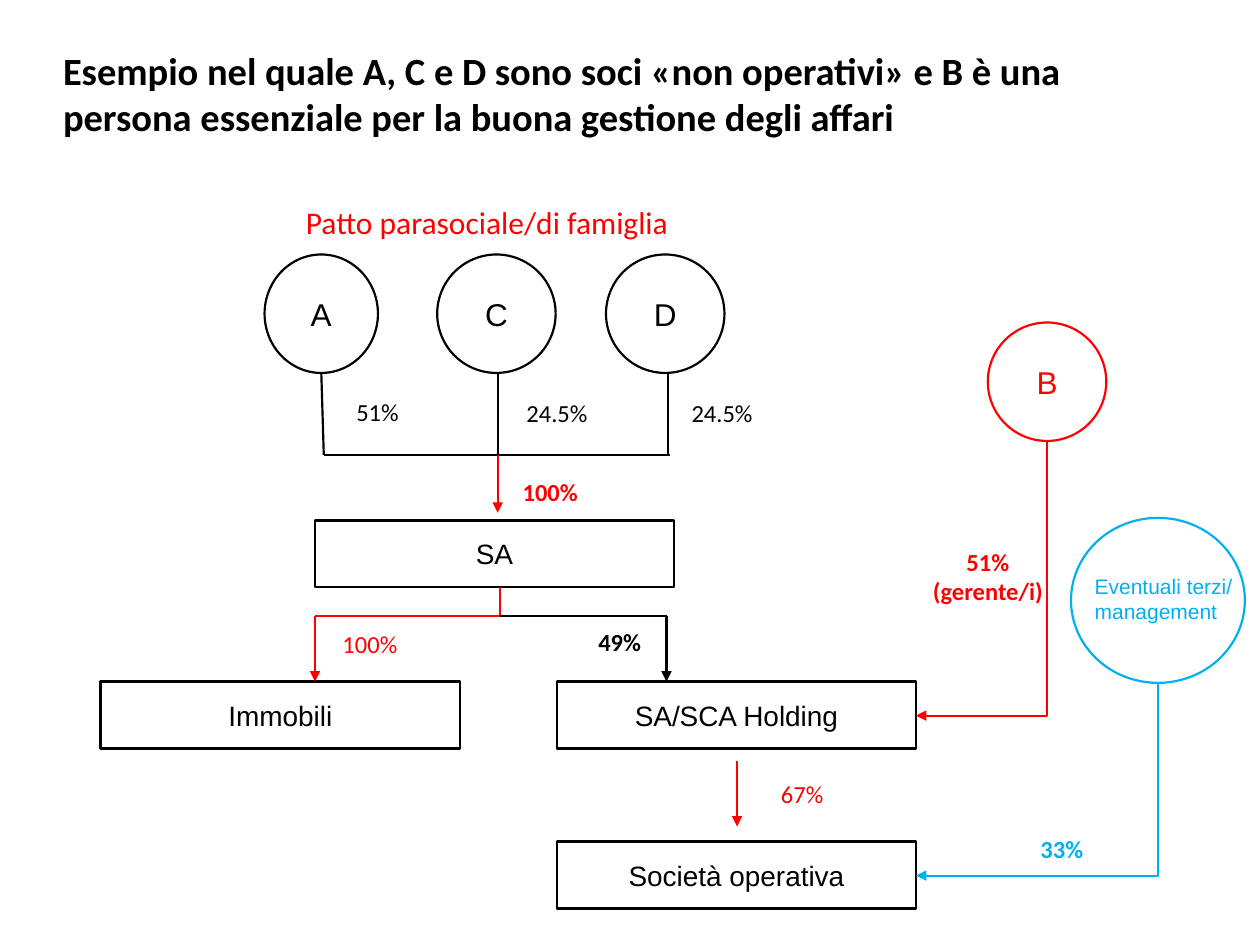
from lxml.etree import SubElement
from pptx import Presentation
from pptx.dml.color import RGBColor
from pptx.enum.shapes import MSO_CONNECTOR as Link, MSO_SHAPE as Shape
from pptx.enum.text import MSO_ANCHOR as Anchor, MSO_AUTO_SIZE as AutoSize, PP_ALIGN as Align
from pptx.oxml.ns import qn
from pptx.util import Inches, Pt

COLORS = {"black": "000000", "red": "FF0000", "blue": "00B0F0"}
COLUMNS, ROWS = 100, 75
BOX_W, BOX_H = 28.5, 5.3
CIRCLE = 9.4


def color_of(name):
    return RGBColor.from_string(COLORS[name])


def write(frame, text, size=14, color="black", font="Calibri", bold=False,
          align=Align.LEFT, anchor=Anchor.TOP, fit=AutoSize.NONE):
    """Fill a text frame, one paragraph per line of text."""
    frame.text = text
    frame.word_wrap = True
    frame.vertical_anchor = anchor
    frame.auto_size = fit
    for paragraph in frame.paragraphs:
        paragraph.alignment = align
        for run in paragraph.runs:
            run.font.size = Pt(size)
            run.font.name = font
            run.font.bold = bold
            run.font.color.rgb = color_of(color)


class Diagram:
    """Draws on one slide; lengths are grid columns and rows."""

    def __init__(self, deck):
        self.slide = deck.slides.add_slide(deck.slide_layouts[5])
        self.shapes = self.slide.shapes
        self.column = deck.slide_width / COLUMNS
        self.row = deck.slide_height / ROWS

    def x(self, columns):
        return round(columns * self.column)

    def y(self, rows):
        return round(rows * self.row)

    def area(self, left, top, width, height):
        return self.x(left), self.y(top), self.x(width), self.y(height)

    def title(self, text, *area):
        heading = self.shapes.title
        heading.left, heading.top, heading.width, heading.height = self.area(*area)
        write(heading.text_frame, text, size=22, bold=True, anchor=Anchor.MIDDLE)

    def node(self, kind, text, area, color="black", size=16, weight=1.5):
        node = self.shapes.add_shape(kind, *self.area(*area))
        node.shadow.inherit = False
        node.fill.background()
        node.line.color.rgb = color_of(color)
        node.line.width = Pt(weight)
        write(node.text_frame, text, size=size, color=color, font="Arial",
              align=Align.CENTER, anchor=Anchor.MIDDLE)

    def person(self, text, left, top, width=CIRCLE, height=CIRCLE, color="black"):
        self.node(Shape.OVAL, text, (left, top, width, height), color, 18, 1.25)

    def company(self, text, left, top):
        self.node(Shape.RECTANGLE, text, (left, top, BOX_W, BOX_H))

    def label(self, text, left, top, width=7.4, height=3.4, **style):
        box = self.shapes.add_textbox(*self.area(left, top, width, height))
        write(box.text_frame, text, fit=AutoSize.SHAPE_TO_FIT_TEXT, **style)

    def line(self, start, end, color="black", arrow=False, kind=Link.STRAIGHT):
        link = self.shapes.add_connector(
            kind, self.x(start[0]), self.y(start[1]), self.x(end[0]), self.y(end[1]))
        link.line.color.rgb = color_of(color)
        link.line.width = Pt(1.25)
        properties = link._element.spPr
        if arrow:
            SubElement(properties.find(qn("a:ln")), qn("a:tailEnd"), type="triangle")
        SubElement(properties, qn("a:effectLst"))
        return link

    def down_then_left(self, start, end, color):
        """Arrow with one corner: an elbow turned a quarter clockwise."""
        link = self.line(start, end, color, arrow=True, kind=Link.ELBOW)
        run, drop = link.width, link.height
        link.left += (run - drop) // 2
        link.top += (drop - run) // 2
        link.width, link.height = drop, run
        properties = link._element.spPr
        properties.find(qn("a:prstGeom")).set("prst", "bentConnector2")
        frame = properties.find(qn("a:xfrm"))
        frame.attrib.pop("flipH", None)
        frame.set("rot", str(90 * 60000))


def main():
    deck = Presentation()
    deck.slide_width, deck.slide_height = Inches(10), Inches(7.5)
    diagram = Diagram(deck)
    diagram.title("Esempio nel quale A, C e D sono soci «non operativi» e B è una "
                  "persona essenziale per la buona gestione degli affari", 4, 1.7, 90, 11.4)
    diagram.label("Patto parasociale/di famiglia", 23.3, 15.6, 70.3, 4, size=18, color="red")

    # Partners and the shares they hold
    bar, middle = 36.1, 39.5
    for name, left, width, foot, share, share_left, share_top in (
            ("A", 21, 9, 25.7, "51%", 27.3, 31),
            ("C", 34.7, CIRCLE, middle, "24.5%", 40.8, 31.1),
            ("D", 48.1, CIRCLE, 53, "24.5%", 53.9, 31.1)):
        diagram.person(name, left, 20.2, width)
        top = 25.5 if name == "A" else foot
        diagram.line((top, 29.6), (foot, bar))
        diagram.label(share, share_left, share_top, 9)
    diagram.line((25.7, bar), (53.2, bar))
    diagram.person("B", 78.4, 25.6, color="red")
    diagram.person("", 85, 41.1, 13.8, 13.1, color="blue")
    diagram.label("Eventuali terzi/ management", 85.9, 45, 15.6, 7.1,
                  size=12, font="Arial", color="blue")

    # Companies
    for name, left, top in (("SA", 25, 41.3), ("Immobili", 8, 54.1),
                            ("SA/SCA Holding", 44.2, 54.1),
                            ("Società operativa", 44.2, 66.8)):
        diagram.company(name, left, top)

    # Ownership lines
    branch = 48.9
    diagram.line((39.7, 46.6), (39.7, branch), "red")
    diagram.line((25, branch), (39.7, branch), "red")
    diagram.line((39.7, branch), (52.9, branch))
    for column, top, bottom, color in ((middle, bar, 40.7, "red"),
                                       (25, branch, 54.1, "red"),
                                       (52.9, branch, 54.1, "black"),
                                       (58.5, 60.4, 65.6, "red")):
        diagram.line((column, top), (column, bottom), color, arrow=True)
    diagram.down_then_left((83.1, 35.1), (72.7, 56.8), "red")
    diagram.down_then_left((91.9, 54.2), (72.7, 69.5), "blue")

    for share, left, top, color, bold in (("100%", 40.5, 37.4, "red", True),
                                          ("100%", 26.2, 49.4, "red", False),
                                          ("49%", 46.5, 49.3, "black", True),
                                          ("67%", 61, 61.3, "red", False),
                                          ("33%", 81.6, 65.7, "blue", True)):
        diagram.label(share, left, top, color=color, bold=bold)
    diagram.label("51%\n(gerente/i)", 70.8, 42.9, 15.2, 5.7,
                  color="red", bold=True, align=Align.CENTER)

    deck.save("out.pptx")


if __name__ == "__main__":
    main()
